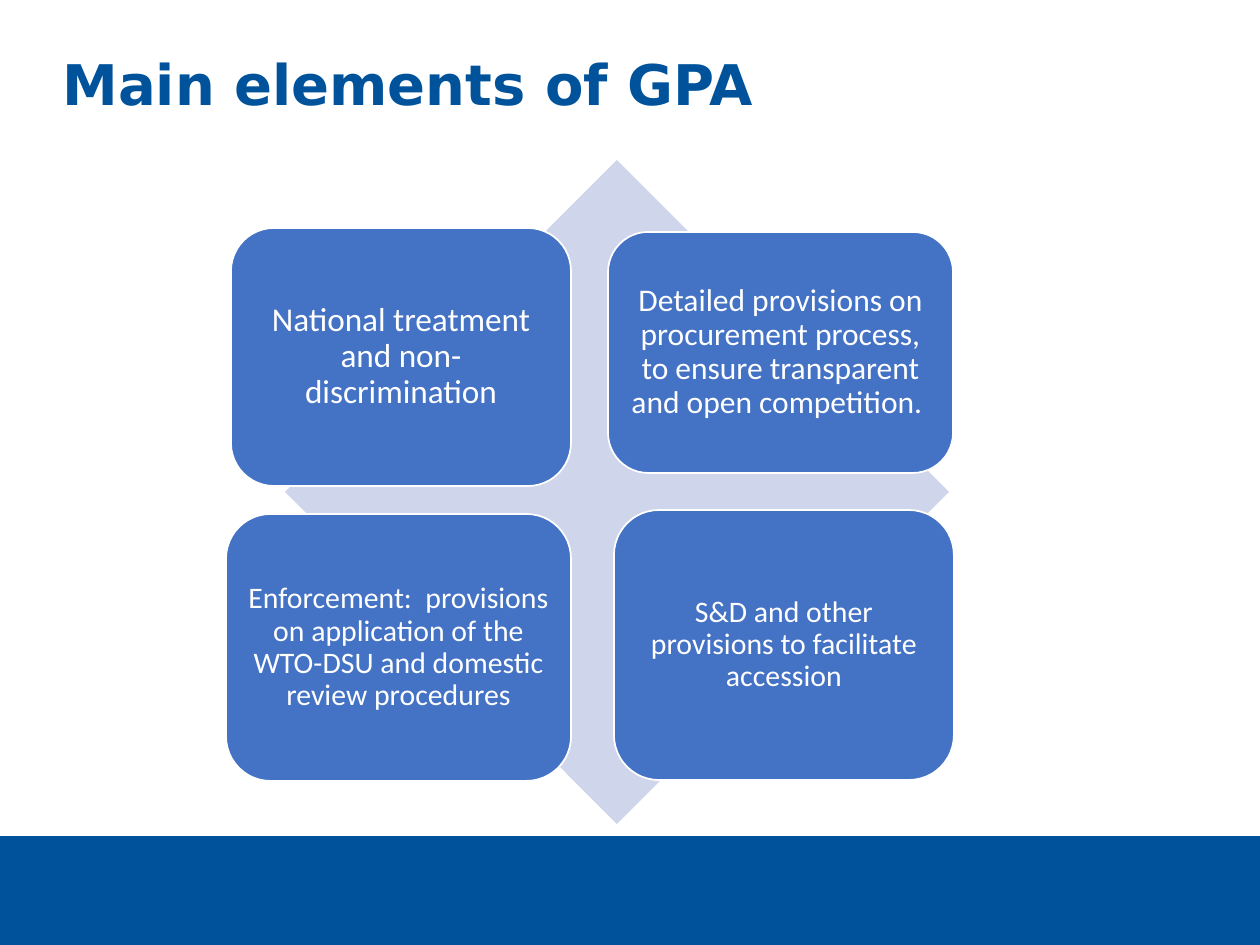
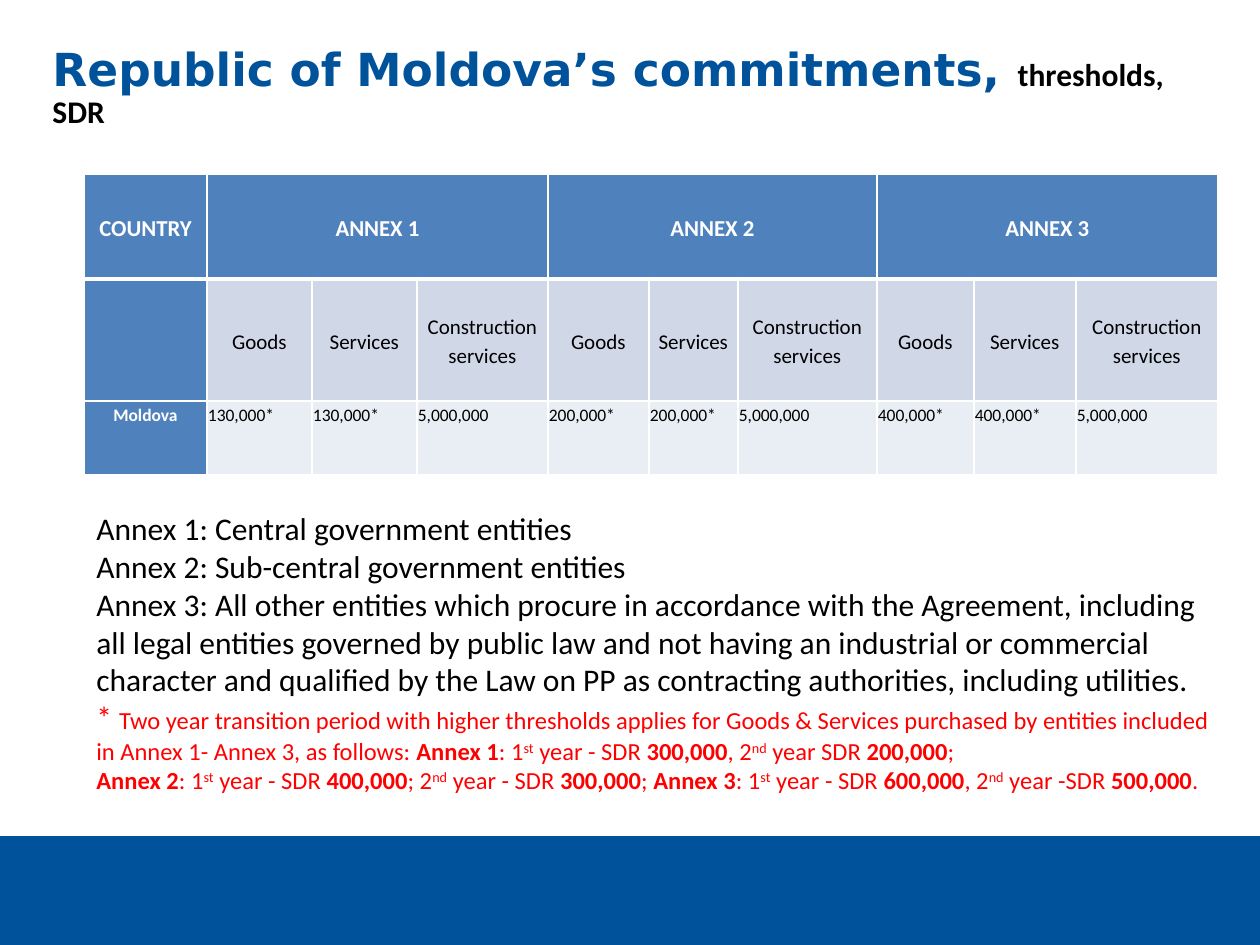
from dataclasses import dataclass
from lxml import etree
from pptx import Presentation
from pptx.dml.color import RGBColor
from pptx.enum.shapes import MSO_SHAPE
from pptx.enum.text import MSO_ANCHOR, PP_ALIGN
from pptx.oxml.ns import qn
from pptx.util import Pt

RECT, ROUND, DIAMOND = MSO_SHAPE.RECTANGLE, MSO_SHAPE.ROUNDED_RECTANGLE, MSO_SHAPE.DIAMOND
TOP, MIDDLE = MSO_ANCHOR.TOP, MSO_ANCHOR.MIDDLE
LEFT, CENTER = PP_ALIGN.LEFT, PP_ALIGN.CENTER
SCALE = 914400 / 126


@dataclass(frozen=True)
class Theme:
    navy: str = "00539B"
    white: str = "FFFFFF"
    black: str = "000000"
    red: str = "FF0000"
    pale: str = "CFD5EA"
    tile: str = "4472C4"
    head: str = "4F81BD"
    sub: str = "D0D8E8"
    row: str = "E9EDF4"
    body: str = "Calibri"
    display: str = "DejaVu Sans"
    title: int = 32
    long: int = 26
    text: int = 18
    note: int = 14
    label: int = 13
    small: int = 12
    tiny: int = 10


T = Theme()
BOLD = {"bold": True}
RAISED = {"base": 30}


def px(n):
    return round(n * SCALE)


def rgb(code):
    return RGBColor.from_string(code)


def style(font, size=T.text, face=T.body, color=T.black, bold=False, base=0):
    font.size, font.name, font.bold = Pt(size), face, bold
    font.color.rgb = rgb(color)
    if base:
        font._element.set("baseline", str(base * 1000))


def write(frame, paras, align=LEFT, lead=None, **form):
    if isinstance(paras, str):
        paras = [[(paras, {})]]
    for i, runs in enumerate(paras):
        para = frame.add_paragraph() if i else frame.paragraphs[0]
        para.alignment = align
        if lead:
            para.line_spacing = lead
        for text, extra in runs:
            for j, line in enumerate(text.split("\n")):
                if j:
                    para.add_line_break()
                run = para.add_run()
                run.text = line
                style(run.font, **{**form, **extra})


def shape(slide, kind, box, fill, line=None):
    item = slide.shapes.add_shape(kind, *map(px, box))
    item.shadow.inherit = False
    item.fill.solid()
    item.fill.fore_color.rgb = rgb(fill)
    if line:
        item.line.color.rgb = rgb(line)
        item.line.width = Pt(1)
    else:
        item.line.fill.background()
    return item


def text(slide, box, paras, **form):
    frame = slide.shapes.add_textbox(*map(px, box)).text_frame
    frame.word_wrap = True
    write(frame, paras, **form)


def page(deck):
    slide = deck.slides.add_slide(deck.slide_layouts[6])
    shape(slide, RECT, (0, 836, 1260, 109), T.navy)
    return slide


def title(slide, box, paras, **form):
    text(slide, box, paras, face=T.display, color=T.navy, bold=True, **form)


def pillars(slide, box):
    x, y, w, h = box
    shape(slide, DIAMOND, (x + 59, y, h, h), T.pale)
    tiles = [
        ((5, 68, 340, 258), 19, "National treatment and non-discrimination"),
        ((382, 72, 345, 241), 18, "Detailed provisions on procurement process, "
         "to ensure transparent and open competition. "),
        ((0, 354, 345, 267), 17, "Enforcement:  provisions on application of the "
         "WTO-DSU and domestic review procedures"),
        ((388, 350, 340, 270), 17, "S&D and other provisions to facilitate accession"),
    ]
    for (dx, dy, wide, high), size, words in tiles:
        tile = shape(slide, ROUND, (x + dx, y + dy, wide, high), T.tile, T.white)
        frame = tile.text_frame
        frame.word_wrap = True
        frame.vertical_anchor = MIDDLE
        frame.margin_left = frame.margin_right = px(9)
        frame.margin_top = frame.margin_bottom = px(9)
        write(frame, words, align=CENTER, lead=0.9, size=size, color=T.white)


def edge(cell, top, bottom):
    props = cell._tc.get_or_add_tcPr()
    for i, (tag, width) in enumerate((("lnL", 1), ("lnR", 1), ("lnT", top), ("lnB", bottom))):
        line = etree.Element(qn("a:" + tag), w=str(Pt(width)))
        fill = etree.SubElement(line, qn("a:solidFill"))
        etree.SubElement(fill, qn("a:srgbClr"), val=T.white)
        props.insert(i, line)


def limits(slide, box):
    cols = [123, 105, 105, 131, 101, 89, 139, 97, 102, 142]
    rows = [105, 122, 74]
    data = [
        ["COUNTRY", "ANNEX 1", "", "", "ANNEX 2", "", "", "ANNEX 3", "", ""],
        [""] + ["Goods", "Services", "Construction services"] * 3,
        ["Moldova"] + [n for low in ("130,000*", "200,000*", "400,000*")
                       for n in (low, low, "5,000,000")],
    ]
    looks = [
        dict(size=T.label, color=T.white, bold=True, align=CENTER),
        dict(size=T.small, align=CENTER),
        dict(size=T.tiny),
    ]
    fills = [T.head, T.sub, T.row]
    edges = [(1, 3), (3, 1), (1, 1)]
    grid = slide.shapes.add_table(len(rows), len(cols), *map(px, box)).table
    for col, wide in zip(grid.columns, cols):
        col.width = px(wide)
    for row, high in zip(grid.rows, rows):
        row.height = px(high)
    for r, line in enumerate(data):
        for c, words in enumerate(line):
            cell = grid.cell(r, c)
            cell.margin_left = cell.margin_right = px(1)
            cell.margin_top = cell.margin_bottom = px(1)
            cell.vertical_anchor = TOP if r == 2 else MIDDLE
            cell.fill.solid()
            cell.fill.fore_color.rgb = rgb(T.head if c == 0 else fills[r])
            edge(cell, *edges[r])
            if words:
                form = {**looks[0], "size": looks[r]["size"]} if c == 0 else looks[r]
                write(cell.text_frame, words, lead=1.15, **form)
    for c in (1, 4, 7):
        grid.cell(0, c).merge(grid.cell(0, c + 2))


def term(name, first, second, gap, dash, end):
    runs = [(name, BOLD), (": 1", {}), ("st", RAISED), (" year - SDR ", {}),
            (first, BOLD), (gap + " 2", {}), ("nd", RAISED), (f" year {dash}SDR ", {}),
            (second, BOLD), (end, {})]
    return [(words, {"size": T.note, "color": T.red, **extra}) for words, extra in runs]


def notes(slide, box):
    red = {"color": T.red}
    text(slide, box, [
        [("Annex 1: Central government entities\n"
          "Annex 2: Sub-central government entities\n"
          "Annex 3: All other entities which procure in accordance with the Agreement, "
          "including all legal entities governed by public law and not having an industrial "
          "or commercial character and qualified by the Law on PP as contracting "
          "authorities, including utilities.", {})],
        [("* ", red),
         ("Two year transition period with higher thresholds applies for Goods & Services "
          "purchased by entities included in Annex 1- Annex 3, as follows: ",
          {**red, "size": T.note}),
         *term("Annex 1", "300,000", "200,000", ",", "", ";")],
        term("Annex 2", "400,000", "300,000", ";", "- ", "; ")
        + term("Annex 3", "600,000", "500,000", ",", "-", "."),
    ])


def main():
    deck = Presentation()
    deck.slide_width, deck.slide_height = px(1260), px(945)

    slide = page(deck)
    title(slide, (50, 43, 743, 81), "Main elements of GPA", size=T.title)
    pillars(slide, (226, 160, 728, 664))

    slide = page(deck)
    title(slide, (40, 41, 1177, 70), [[
        ("Republic of Moldova’s commitments, ", {}),
        ("thresholds, SDR", {"size": T.text, "face": T.body, "color": T.black}),
    ]], size=T.long, lead=0.9)
    limits(slide, (84, 174, 1134, 301))
    notes(slide, (84, 503, 1142, 301))

    deck.save("out.pptx")


if __name__ == "__main__":
    main()
